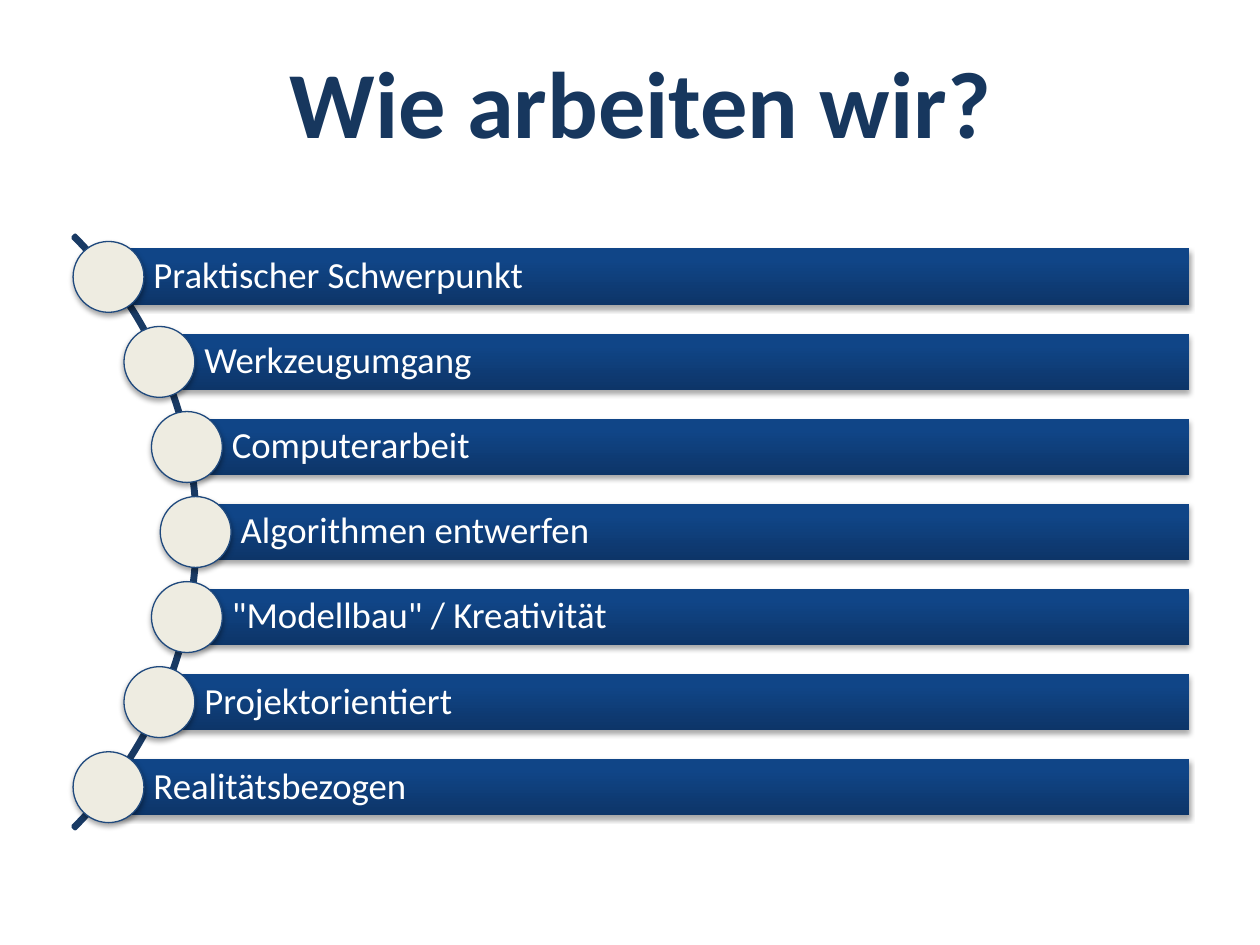
from dataclasses import dataclass
from math import sqrt

from lxml import etree
from pptx import Presentation
from pptx.dml.color import RGBColor
from pptx.enum.shapes import MSO_SHAPE
from pptx.enum.text import MSO_ANCHOR, MSO_AUTO_SIZE, PP_ALIGN
from pptx.oxml.ns import qn
from pptx.util import Pt

ARC = MSO_SHAPE.BLOCK_ARC
RECT = MSO_SHAPE.RECTANGLE
OVAL = MSO_SHAPE.OVAL
MIDDLE = MSO_ANCHOR.MIDDLE
TOP = MSO_ANCHOR.TOP
GROW = MSO_AUTO_SIZE.SHAPE_TO_FIT_TEXT
LEFT = PP_ALIGN.LEFT
CENTER = PP_ALIGN.CENTER

FONT = "Calibri"
STOPS = ((0, "0D3568"), (80, "104587"), (100, "0E458A"))
HUB_X, HUB_Y = -126.6, 304
ARC_R, DOT_R = 239.8, 20.25
ORBIT = 238.4
PITCH = 48.6
BAR_H = 32.4
RIGHT = 679.4


@dataclass
class Item:
    text: str
    x: float
    y: float


def paint(target, code: str) -> None:
    target.rgb = RGBColor.from_string(code)


def add_shape(slide, kind, x: float, y: float, w: float, h: float):
    shape = slide.shapes.add_shape(kind, Pt(x), Pt(y), Pt(w), Pt(h))
    shape.shadow.inherit = False
    return shape


def add_shade(shape) -> None:
    effects = shape._element.spPr.find(qn("a:effectLst"))
    shade = etree.SubElement(
        effects, qn("a:outerShdw"), blurRad=str(Pt(3.1)),
        dist=str(Pt(1.8)), dir="5400000", rotWithShape="0")
    tint = etree.SubElement(shade, qn("a:srgbClr"), val="000000")
    etree.SubElement(tint, qn("a:alpha"), val="35000")


def add_blend(shape) -> None:
    shape.fill.gradient()
    shape.fill.gradient_angle = 90
    stops = shape._element.spPr.find(".//" + qn("a:gsLst"))
    for stop in list(stops):
        stops.remove(stop)
    for spot, code in STOPS:
        stop = etree.SubElement(stops, qn("a:gs"), pos=str(spot * 1000))
        etree.SubElement(stop, qn("a:srgbClr"), val=code)


def add_run(par, text: str, size: float, code: str, bold: bool) -> None:
    run = par.add_run()
    run.text = text
    run.font.name = FONT
    run.font.size = Pt(size)
    run.font.bold = bold
    paint(run.font.color, code)


def draw_title(slide, text: str) -> None:
    title = slide.shapes.title
    title.left, title.top = Pt(156.2), Pt(21.6)
    title.width, title.height = Pt(419.8), Pt(72.7)
    frame = title.text_frame
    frame.word_wrap = False
    frame.auto_size = GROW
    frame.vertical_anchor = TOP
    par = frame.paragraphs[0]
    par.alignment = CENTER
    add_run(par, text, 54, "17375E", True)


def draw_arc(slide) -> None:
    arc = add_shape(slide, ARC, HUB_X - ARC_R, HUB_Y - ARC_R,
                    2 * ARC_R, 2 * ARC_R)
    for index, value in enumerate((189, 27, 0.004)):
        arc.adjustments[index] = value
    arc.fill.background()
    arc.line.width = Pt(2)
    paint(arc.line.color, "193A64")


def draw_bar(slide, item: Item) -> None:
    bar = add_shape(slide, RECT, item.x, item.y - BAR_H / 2,
                    RIGHT - item.x, BAR_H)
    add_blend(bar)
    bar.line.fill.background()
    add_shade(bar)
    frame = bar.text_frame
    frame.word_wrap = True
    frame.vertical_anchor = MIDDLE
    frame.margin_left = Pt(25.7)
    frame.margin_top = frame.margin_right = frame.margin_bottom = Pt(4.2)
    par = frame.paragraphs[0]
    par.alignment = LEFT
    par.line_spacing = 0.9
    add_run(par, item.text, 21, "FFFFFF", False)


def draw_dot(slide, item: Item) -> None:
    dot = add_shape(slide, OVAL, item.x - DOT_R, item.y - DOT_R,
                    2 * DOT_R, 2 * DOT_R)
    dot.fill.solid()
    paint(dot.fill.fore_color, "EEECE1")
    dot.line.width = Pt(0.75)
    paint(dot.line.color, "1F497D")
    add_shade(dot)


def lay_out(names: list[str]) -> list[Item]:
    items = []
    for index, name in enumerate(names):
        rise = (index - (len(names) - 1) / 2) * PITCH
        items.append(Item(name, HUB_X + sqrt(ORBIT ** 2 - rise ** 2),
                          HUB_Y + rise))
    return items


def main() -> None:
    deck = Presentation()
    deck.slide_width, deck.slide_height = Pt(720), Pt(540)
    slide = deck.slides.add_slide(deck.slide_layouts[5])
    draw_title(slide, "Wie arbeiten wir?")
    draw_arc(slide)
    for item in lay_out([
        "Praktischer Schwerpunkt",
        "Werkzeugumgang",
        "Computerarbeit",
        "Algorithmen entwerfen",
        '"Modellbau" / Kreativität',
        "Projektorientiert",
        "Realitätsbezogen",
    ]):
        draw_bar(slide, item)
        draw_dot(slide, item)
    deck.save("out.pptx")


if __name__ == "__main__":
    main()
